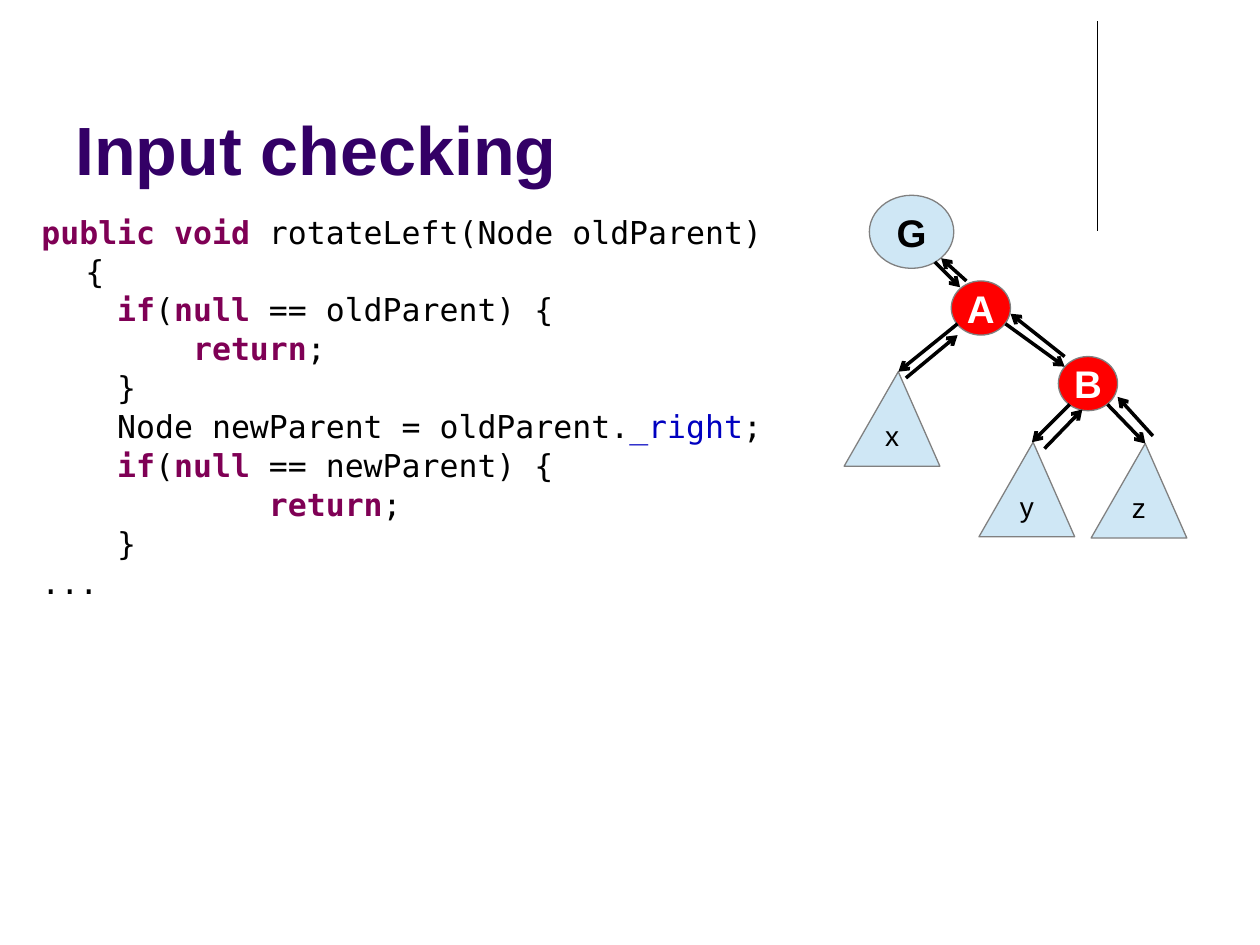
"""Build the "Input checking" slide: a code listing beside a tree rotation diagram."""
from lxml.etree import SubElement
from pptx import Presentation
from pptx.dml.color import RGBColor
from pptx.enum.shapes import MSO_CONNECTOR as Connector, MSO_SHAPE as Shape
from pptx.enum.text import MSO_ANCHOR as Anchor, PP_ALIGN as Align
from pptx.oxml.ns import qn
from pptx.util import Inches, Pt

BLACK = RGBColor(0x00, 0x00, 0x00)
WHITE = RGBColor(0xFF, 0xFF, 0xFF)
GRAY = RGBColor(0x80, 0x80, 0x80)
RED = RGBColor(0xFF, 0x00, 0x00)
PALE_BLUE = RGBColor(0xCF, 0xE7, 0xF5)
PURPLE = RGBColor(0x33, 0x00, 0x66)
KEYWORD = RGBColor(0x7F, 0x00, 0x55)
FIELD = RGBColor(0x00, 0x00, 0xC0)
SANS, MONO = "Arial", "DejaVu Sans Mono"

TITLE = "Input checking"
CODE = [
    [("public void", KEYWORD), (" rotateLeft(Node oldParent) {", BLACK)],
    [("    if", KEYWORD), ("(", BLACK), ("null", KEYWORD), (" == oldParent) {", BLACK)],
    [("        return", KEYWORD), (";", BLACK)],
    [("    }", BLACK)],
    [("    Node newParent = oldParent.", BLACK), ("_right", FIELD), (";", BLACK)],
    [("    if", KEYWORD), ("(", BLACK), ("null", KEYWORD), (" == newParent) {", BLACK)],
    [("            return", KEYWORD), (";", BLACK)],
    [("    }", BLACK)],
    [("...", BLACK)],
]
NODES = [
    ("A", 7.55, 2.23, 0.47, 0.43, RED, WHITE),
    ("B", 8.4, 2.83, 0.47, 0.43, RED, WHITE),
    ("G", 6.9, 1.55, 0.67, 0.58, PALE_BLUE, BLACK),
]
SUBTREES = [("x", 6.7, 2.95), ("y", 7.77, 3.51), ("z", 8.66, 3.52)]
SUBTREE_WIDTH, SUBTREE_HEIGHT, APEX_OFFSET = 0.76, 0.75, 0.43
ARROWS = [
    (7.98, 2.57, 8.45, 2.91), (8.45, 2.83, 8.02, 2.49),
    (7.6, 2.57, 7.13, 2.95), (7.19, 3, 7.6, 2.66),
    (8.49, 3.21, 8.19, 3.51), (8.29, 3.56, 8.59, 3.25),
    (8.79, 3.21, 9.09, 3.52), (9.15, 3.46, 8.87, 3.15),
    (7.42, 2.08, 7.62, 2.28), (7.67, 2.23, 7.47, 2.05),
]


def add_span(para, text, font, size, color, bold=False):
    span = para.add_run()
    span.text = text
    span.font.name, span.font.size, span.font.bold = font, Pt(size), bold
    span.font.color.rgb = color


def add_box(page, left, top, width, height, anchor):
    box = page.shapes.add_textbox(*map(Inches, (left, top, width, height)))
    box.text_frame.word_wrap = True
    box.text_frame.vertical_anchor = anchor
    return box.text_frame


def add_line(page, ends, width, arrow=False):
    line = page.shapes.add_connector(Connector.STRAIGHT, *map(Inches, ends))
    line.line.color.rgb = BLACK
    line.line.width = Pt(width)
    if arrow:
        SubElement(line.line._get_or_add_ln(), qn("a:tailEnd"), type="arrow")
    SubElement(line._element.spPr, qn("a:effectLst"))


def style_shape(shape, label, fill, size, color, bold, top_inset):
    shape.shadow.inherit = False
    shape.fill.solid()
    shape.fill.fore_color.rgb = fill
    shape.line.color.rgb = GRAY
    shape.line.width = Pt(0)
    frame = shape.text_frame
    frame.word_wrap = False
    frame.vertical_anchor = Anchor.MIDDLE
    frame.margin_left = frame.margin_right = frame.margin_bottom = 0
    frame.margin_top = Inches(top_inset)
    para = frame.paragraphs[0]
    para.alignment = Align.CENTER
    add_span(para, label, SANS, size, color, bold)


def add_node(page, label, left, top, width, height, fill, color):
    node = page.shapes.add_shape(Shape.OVAL, *map(Inches, (left, top, width, height)))
    style_shape(node, label, fill, 22, color, True, 0)


def add_subtree(page, label, left, top):
    bottom = Inches(top + SUBTREE_HEIGHT)
    outline = page.shapes.build_freeform(Inches(left + APEX_OFFSET), Inches(top))
    corners = [(Inches(left), bottom), (Inches(left + SUBTREE_WIDTH), bottom)]
    outline.add_line_segments(corners, close=True)
    style_shape(outline.convert_to_shape(), label, PALE_BLUE, 16, BLACK, False, 0.26)


def add_code(page):
    frame = add_box(page, 0.11, 1.63, 6.19, 2.67, Anchor.TOP)
    for index, line in enumerate(CODE):
        para = frame.add_paragraph() if index else frame.paragraphs[0]
        para.line_spacing = 1.03
        properties = para._p.get_or_add_pPr()
        properties.set("marL", str(Inches(0.47)))
        properties.set("indent", str(Inches(-0.35)))
        for text, color in line:
            add_span(para, text, MONO, 18, color, color == KEYWORD)


def main():
    deck = Presentation()
    deck.slide_width, deck.slide_height = Inches(10), Inches(7.5)
    page = deck.slides.add_slide(deck.slide_layouts[6])
    add_line(page, (8.71, 0.17, 8.71, 1.83), 0.75)
    add_code(page)
    title = add_box(page, 0.5, 0.13, 8.25, 1.42, Anchor.BOTTOM)
    add_span(title.paragraphs[0], TITLE, SANS, 39, PURPLE, True)
    for node in NODES:
        add_node(page, *node)
    for subtree in SUBTREES:
        add_subtree(page, *subtree)
    for ends in ARROWS:
        add_line(page, ends, 0, arrow=True)
    deck.save("out.pptx")


if __name__ == "__main__":
    main()
